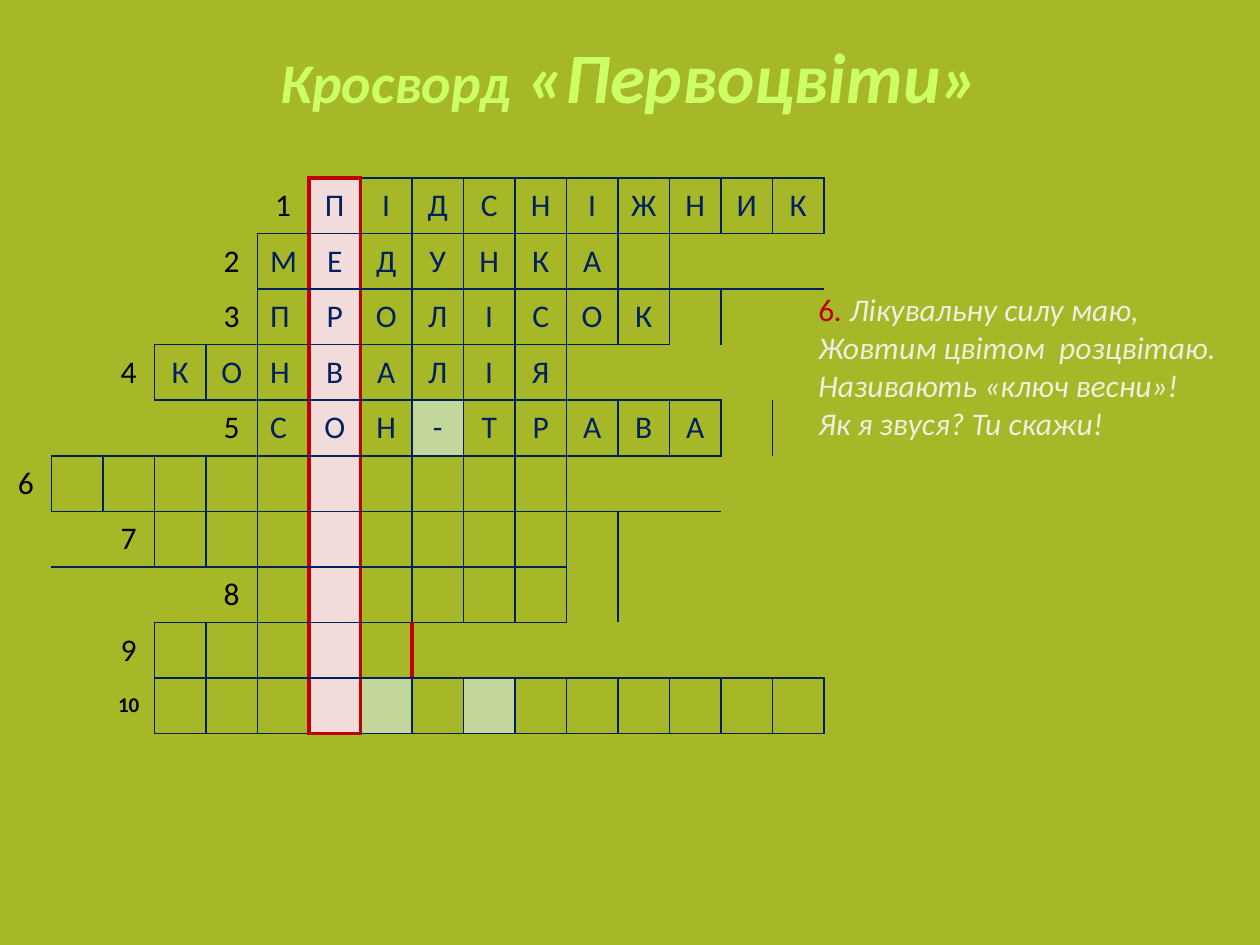
"""Builds a crossword slide about early spring flowers with one riddle."""
from lxml.etree import SubElement
from pptx import Presentation
from pptx.dml.color import RGBColor
from pptx.enum.text import MSO_ANCHOR, MSO_AUTO_SIZE, PP_ALIGN
from pptx.oxml.ns import qn
from pptx.util import Pt

COLORS = {"bg": "A6B727", "title": "CCFF66", "navy": "002060", "red": "C00000",
          "pink": "F2DCDB", "green": "C3D69B", "black": "000000", "riddle": "EBF1DE"}
FONT = "Calibri"
COLS, KEY = 16, 6
TITLE = [("Кросворд", 32), (" «Первоцвіти»", 40.5)]
RIDDLE = ["Лікувальну силу маю,", "Жовтим цвітом  розцвітаю.",
          "Називають «ключ весни»!", "Як я звуся? Ти скажи!"]

# (first letter column, word, first and last vertical line)
ROWS = [
    (6, "ПІДСНІЖНИК", 6, 16),
    (5, "МЕДУНКА", 5, 13),
    (5, "ПРОЛІСОК", 5, 14),
    (3, "КОНВАЛІЯ", 3, 11),
    (5, "СОН-ТРАВА", 5, 15),
    (1, "", 1, 11),
    (3, "", 3, 12),
    (5, "", 5, 12),
    (3, "", 3, 8),
    (3, "", 3, 16),
]
RULES = [(6, 16), (5, 16), (5, 16), (3, 13), (3, 14), (1, 14),
         (1, 14), (1, 11), (3, 11), (3, 16), (3, 16)]
GREEN_CELLS = {(4, 8), (9, 7), (9, 9)}
LEFT_CELLS = {(2, 5), (3, 5), (4, 5)}
RED_VERTICALS = {(r, c) for r in range(len(ROWS)) for c in (KEY, KEY + 1)} | {(8, 8)}
RED_RULES = {(0, KEY), (len(ROWS), KEY)}


def px(n):
    return round(n * 914400 / 126)


def add_run(p, text, size, color, bold=False, italic=False):
    r = p.add_run()
    r.text = text
    r.font.name, r.font.size = FONT, Pt(size)
    r.font.bold, r.font.italic = bold, italic
    r.font.color.rgb = RGBColor.from_string(COLORS[color])


def vertical(row, edge):
    first, last = ROWS[row][2:]
    if (row, edge) in RED_VERTICALS:
        return "red"
    return "navy" if first <= edge <= last else None


def horizontal(edge, col):
    first, last = RULES[edge]
    if (edge, col) in RED_RULES:
        return "red"
    return "navy" if first <= col < last else None


def set_borders(cell, sides):
    tc_pr = cell._tc.get_or_add_tcPr()
    for i, (side, color) in enumerate(sides.items()):
        ln = SubElement(tc_pr, qn("a:ln" + side))
        tc_pr.insert(i, ln)
        if color:
            ln.set("w", str(Pt(2.25 if color == "red" else 1)))
            fill = SubElement(ln, qn("a:solidFill"))
            SubElement(fill, qn("a:srgbClr")).set("val", COLORS[color])
        else:
            SubElement(ln, qn("a:noFill"))


def fill_cell(cell, row, col):
    start, word = ROWS[row][:2]
    tint = "pink" if col == KEY else "green" if (row, col) in GREEN_CELLS else None
    if tint:
        cell.fill.solid()
        cell.fill.fore_color.rgb = RGBColor.from_string(COLORS[tint])
    else:
        cell.fill.background()
    set_borders(cell, {"L": vertical(row, col), "R": vertical(row, col + 1),
                       "T": horizontal(row, col), "B": horizontal(row + 1, col)})
    cell.vertical_anchor = MSO_ANCHOR.MIDDLE
    p = cell.text_frame.paragraphs[0]
    p.alignment = PP_ALIGN.LEFT if (row, col) in LEFT_CELLS else PP_ALIGN.CENTER
    if col == start - 1:
        last = row == len(ROWS) - 1
        add_run(p, str(row + 1), 12 if last else 18, "black", bold=last)
    elif start <= col < start + len(word):
        add_run(p, word[col - start], 18, "navy")


def main():
    prs = Presentation()
    prs.slide_width, prs.slide_height = px(1260), px(945)
    s = prs.slides.add_slide(prs.slide_layouts[5])
    s.background.fill.solid()
    s.background.fill.fore_color.rgb = RGBColor.from_string(COLORS["bg"])

    title = s.shapes.title
    title.left, title.top, title.width, title.height = px(63), px(26), px(1134), px(158)
    title.text_frame.vertical_anchor = MSO_ANCHOR.TOP
    p = title.text_frame.paragraphs[0]
    p.alignment = PP_ALIGN.CENTER
    for text, size in TITLE:
        add_run(p, text, size, "title", bold=True, italic=True)

    frame = s.shapes.add_table(len(ROWS), COLS, 0, px(178), px(824), px(556))
    title.element.addprevious(frame.element)
    table = frame.table
    table.first_row = table.horz_banding = False
    for row in range(len(ROWS)):
        for col in range(COLS):
            fill_cell(table.cell(row, col), row, col)

    riddle = s.shapes.add_textbox(px(806), px(284), px(427), px(165))
    tf = riddle.text_frame
    tf.word_wrap = False
    tf.auto_size = MSO_AUTO_SIZE.SHAPE_TO_FIT_TEXT
    p = tf.paragraphs[0]
    add_run(p, "6", 18, "red")
    add_run(p, ". ", 18, "red", italic=True)
    for i, line in enumerate(RIDDLE):
        if i:
            p.add_line_break()
        add_run(p, line, 18, "riddle", italic=True)

    prs.save("out.pptx")


if __name__ == "__main__":
    main()
